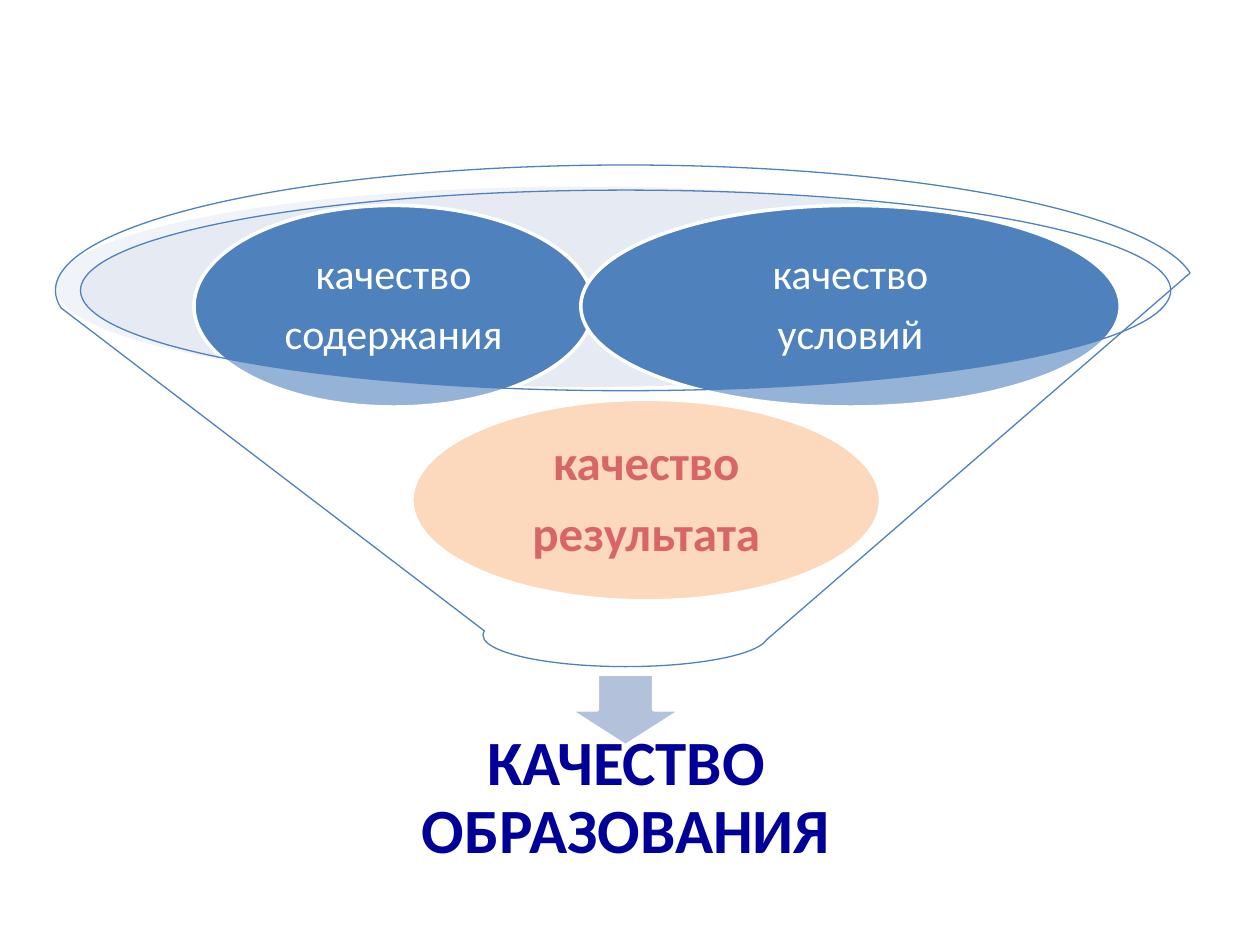
import pptx
import pptx.util
import pptx.dml.color
import pptx.enum.shapes
import pptx.enum.text
import pptx.oxml.ns
import lxml.etree

Pt = pptx.util.Pt
SHAPE = pptx.enum.shapes.MSO_SHAPE
ALIGN = pptx.enum.text.PP_ALIGN
ANCHOR = pptx.enum.text.MSO_ANCHOR


def add_part(kind, box, fill, line=None, line_width=2, opacity=100):
    """Add a flat preset shape; box is left, top, width, height in points."""
    part = slide.shapes.add_shape(kind, *map(Pt, box))
    part.shadow.inherit = False
    part.fill.solid()
    part.fill.fore_color.rgb = pptx.dml.color.RGBColor.from_string(fill)
    if opacity < 100:
        color = part.fill._xPr.find(".//" + pptx.oxml.ns.qn("a:srgbClr"))
        lxml.etree.SubElement(color, pptx.oxml.ns.qn("a:alpha"), val=str(opacity * 1000))
    if line:
        part.line.color.rgb = pptx.dml.color.RGBColor.from_string(line)
        part.line.width = Pt(line_width)
    else:
        part.line.fill.background()
    return part


def write_lines(part, lines, size, color, bold, inset):
    frame = part.text_frame
    frame.word_wrap = True
    frame.vertical_anchor = ANCHOR.MIDDLE
    frame.margin_left = frame.margin_right = Pt(inset)
    frame.margin_top = frame.margin_bottom = Pt(inset)
    frame.text = "\n".join(lines)
    for paragraph in frame.paragraphs:
        paragraph.alignment = ALIGN.CENTER
        paragraph.line_spacing = 0.9
        paragraph.space_after = Pt(round(size * 0.35, 1))
        paragraph.font.name = "Calibri"
        paragraph.font.size = Pt(size)
        paragraph.font.bold = bold
        paragraph.font.color.rgb = pptx.dml.color.RGBColor.from_string(color)


presentation = pptx.Presentation()
presentation.slide_width = Pt(720)
presentation.slide_height = Pt(540)
slide = presentation.slides.add_slide(presentation.slide_layouts[6])

# Mouth of the funnel and the arrow to the outcome
add_part(SHAPE.OVAL, (31.7, 106.6, 602.6, 114.5), "C2CDE1", opacity=40)
add_part(SHAPE.DOWN_ARROW, (325.4, 385.2, 64.1, 41), "B3C1DB", "FFFFFF")

outcome = slide.shapes.add_textbox(Pt(204.5), Pt(418.3), Pt(306.7), Pt(76.3))
write_lines(outcome, ["КАЧЕСТВО ОБРАЗОВАНИЯ"], 36, "000099", True, 20)

# Ingredients: second word, left, top, width, fill, size, text colour, bold
ingredients = [
    ("результата", 235.4, 228.2, 267.8, "FAC090", 28, "C00000", True),
    ("содержания", 110.9, 117.4, 228.2, "4F81BD", 24, "FFFFFF", False),
    ("условий", 331.9, 117.4, 308.2, "4F81BD", 24, "FFFFFF", False),
]
for aspect, left, top, width, fill, size, color, bold in ingredients:
    ingredient = add_part(SHAPE.OVAL, (left, top, width, 115.2), fill, "FFFFFF")
    write_lines(ingredient, ["качество", aspect], size, color, bold, 2.5)

# The translucent funnel lies over everything it holds
add_part(SHAPE.FUNNEL, (31.7, 94.3, 651.6, 286.6), "FFFFFF", "4F81BD", 0.75, 40)

presentation.save("out.pptx")
